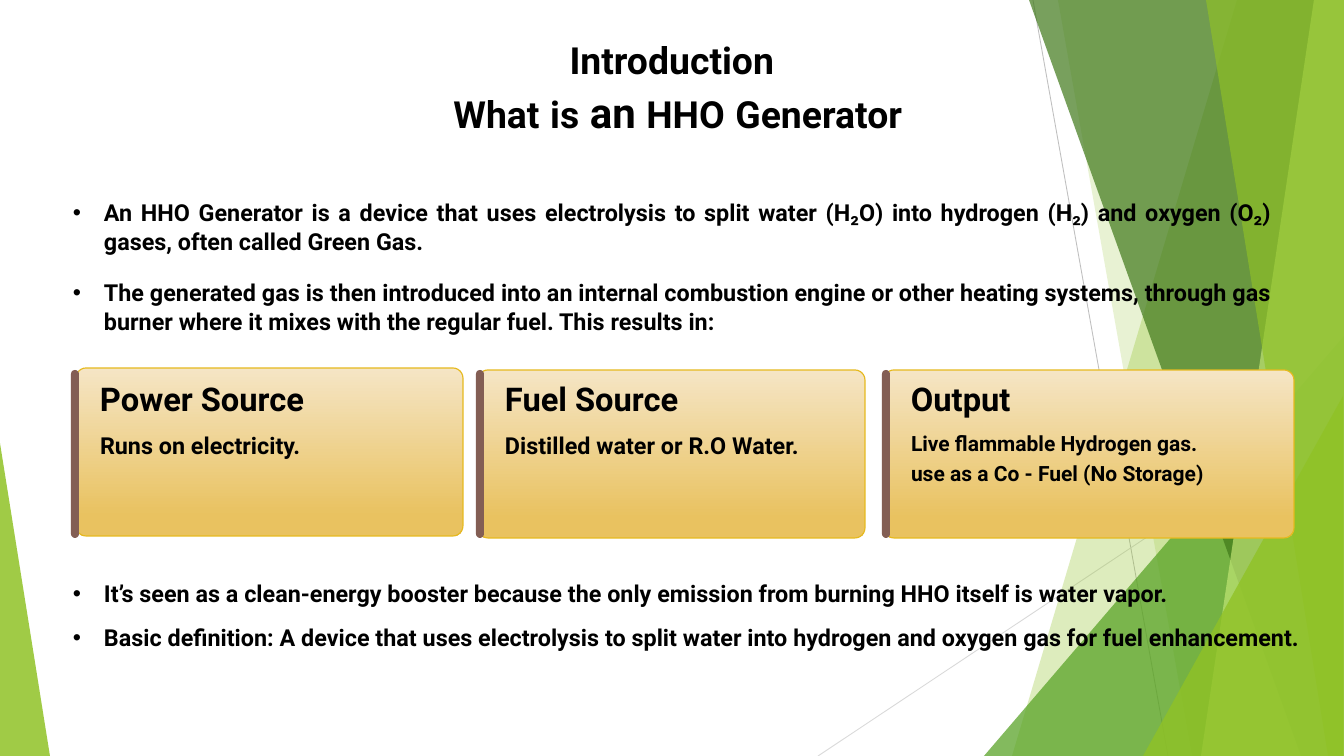
import pptx
import pptx.util
import pptx.dml.color
import pptx.enum.shapes
import pptx.enum.text
import pptx.oxml.ns
import lxml.etree

PX = 914400 / 84
COLOURS = {
    "text": "000000", "lime": "90C226", "green": "54A021", "forest": "3F7819",
    "pale": "C0E474", "upright": "BFBFBF", "slant": "D9D9D9", "bar": "835E54",
    "card top": "F5E5C5", "card bottom": "E9C260", "card edge": "E6B91E",
}
RGB = {name: pptx.dml.color.RGBColor.from_string(code) for name, code in COLOURS.items()}
SHAPES = pptx.enum.shapes.MSO_SHAPE
ALIGN = pptx.enum.text.PP_ALIGN
qn = pptx.oxml.ns.qn


def px(*lengths):
    return [round(length * PX) for length in lengths]


def add_text(box, lines, size, spacing=25, bullet=False):
    frame = slide.shapes.add_textbox(*px(*box)).text_frame
    frame.margin_left = frame.margin_top = frame.margin_right = frame.margin_bottom = 0
    frame.word_wrap = True
    frame.text = lines
    for paragraph in frame.paragraphs:
        paragraph.alignment = ALIGN.JUSTIFY
        paragraph.line_spacing = pptx.util.Pt(spacing)
        font = paragraph.runs[0].font
        font.name, font.size, font.bold = "Roboto", pptx.util.Pt(size), True
        font.color.rgb = RGB["text"]
        if bullet:
            properties = paragraph._p.get_or_add_pPr()
            indent = px(31)[0]
            properties.set("marL", str(indent))
            properties.set("indent", str(-indent))
            lxml.etree.SubElement(properties, qn("a:buFont")).set("typeface", "Arial")
            lxml.etree.SubElement(properties, qn("a:buChar")).set("char", "•")


deck = pptx.Presentation()
deck.slide_width, deck.slide_height = px(1344, 756)
slide = deck.slides.add_slide(deck.slide_layouts[5])

# Thin background lines
for ends, colour in [((1033, 0, 1168, 756), "upright"), ((1344, 406, 818, 756), "slant")]:
    ray = slide.shapes.add_connector(pptx.enum.shapes.MSO_CONNECTOR.STRAIGHT, *px(*ends))
    ray.line.color.rgb = RGB[colour]
    ray.line.width = pptx.util.Pt(0.75)
    lxml.etree.SubElement(ray._element.spPr, qn("a:effectLst"))

# Translucent facets: bands as (top x, bottom x), triangles as (box, apex)
facets = [
    ("band", (1237, 1012), "lime", 30),
    ("band", (1058, 1192), "lime", 20),
    ("triangle", ((984, 336, 360, 420), 1), "green", 72),
    ("band", (1029, 1301), "forest", 70),
    ("band", (1314, 1201), "pale", 70),
    ("band", (1206, 1328), "lime", 65),
    ("triangle", ((1143, 396, 200, 360), 1), "lime", 80),
    ("triangle", ((0, 443, 50, 313), 0), "lime", 85),
]
for kind, geometry, colour, opacity in facets:
    if kind == "band":
        top_x, bottom_x = geometry
        outline = slide.shapes.build_freeform(top_x, 0, scale=PX)
        outline.add_line_segments([(1344, 0), (1344, 756), (bottom_x, 756)])
        facet = outline.convert_to_shape()
    else:
        box, apex = geometry
        facet = slide.shapes.add_shape(SHAPES.ISOSCELES_TRIANGLE, *px(*box))
        facet.adjustments[0] = apex
    facet.shadow.inherit = False
    facet.line.fill.background()
    facet.fill.solid()
    facet.fill.fore_color.rgb = RGB[colour]
    tint = facet._element.spPr.find(qn("a:solidFill"))[0]
    lxml.etree.SubElement(tint, qn("a:alpha")).set("val", str(opacity * 1000))

# Title
title = slide.shapes.title
title.left, title.top, title.width, title.height = px(198, 25, 948, 140)
heading = title.text_frame
heading.margin_left = heading.margin_top = heading.margin_right = heading.margin_bottom = 0
heading.word_wrap = False
heading.auto_size = pptx.enum.text.MSO_AUTO_SIZE.NONE
heading.vertical_anchor = pptx.enum.text.MSO_ANCHOR.TOP
title_lines = [
    [("Introduction", 32)],
    [(" ", 40), ("What", 32), (" ", 36), ("is", 32), (" an ", 36), ("HHO", 32),
     (" ", 36), ("Generator", 32)],
]
heading.add_paragraph()
for paragraph, pieces in zip(heading.paragraphs, title_lines):
    paragraph.alignment = ALIGN.CENTER
    paragraph.line_spacing = pptx.util.Pt(48.5)
    for words, size in pieces:
        run = paragraph.add_run()
        run.text = words
        run.font.name, run.font.size, run.font.bold = "Roboto", pptx.util.Pt(size), True
        run.font.color.rgb = RGB["text"]

# Bullets above and below the cards
bullets = [
    (197, 1199, 58, "An HHO Generator is a device that uses electrolysis to split water (H₂O) "
     "into hydrogen (H₂) and oxygen (O₂) gases, often called Green Gas."),
    (277, 1199, 58, "The generated gas is then introduced into an internal combustion engine or "
     "other heating systems, through gas burner where it mixes with the regular fuel. "
     "This results in:"),
    (578, 1199, 29, "It’s seen as a clean-energy booster because the only emission from "
     "burning HHO itself is water vapor."),
    (622, 1240, 29, "Basic definition: A device that uses electrolysis to split water into "
     "hydrogen and oxygen gas for fuel enhancement."),
]
for top, width, height, sentence in bullets:
    add_text((73, top, width, height), sentence, 20, bullet=True)

# Cards: name, panel box, detail, detail size, detail top and height
cards = [
    ("Power Source", (76, 368, 387, 168), "Runs on electricity.", 20, (430, 87)),
    ("Fuel Source", (478, 370, 387, 168), "Distilled water or R.O Water.", 20, (430, 87)),
    ("Output", (884, 370, 410, 168),
     "Live flammable Hydrogen gas.\nuse as a Co - Fuel (No Storage)", 18, (427, 58)),
]
for index, (name, panel_box, detail, size, (detail_top, detail_height)) in enumerate(cards):
    bar_left = 71 + 811 * index // 2
    panel = slide.shapes.add_shape(SHAPES.ROUNDED_RECTANGLE, *px(*panel_box))
    panel.adjustments[0] = 0.06
    panel.shadow.inherit = False
    panel.fill.gradient()
    panel.fill.gradient_angle = 270
    stops = [(0, "card top"), (0.88, "card bottom")]
    for stop, (position, colour) in zip(panel.fill.gradient_stops, stops):
        stop.position = position
        stop.color.rgb = RGB[colour]
    panel.line.color.rgb = RGB["card edge"]
    panel.line.width = pptx.util.Pt(1)

    bar = slide.shapes.add_shape(SHAPES.ROUNDED_RECTANGLE, *px(bar_left, 370, 8, 168))
    bar.adjustments[0] = 0.5
    bar.shadow.inherit = False
    bar.fill.solid()
    bar.fill.fore_color.rgb = RGB["bar"]
    bar.line.fill.background()

    add_text((bar_left + 29, 390, 228, 28), name, 28, spacing=24)
    add_text((bar_left + 29, detail_top, 340, detail_height), detail, size)

deck.save("out.pptx")
